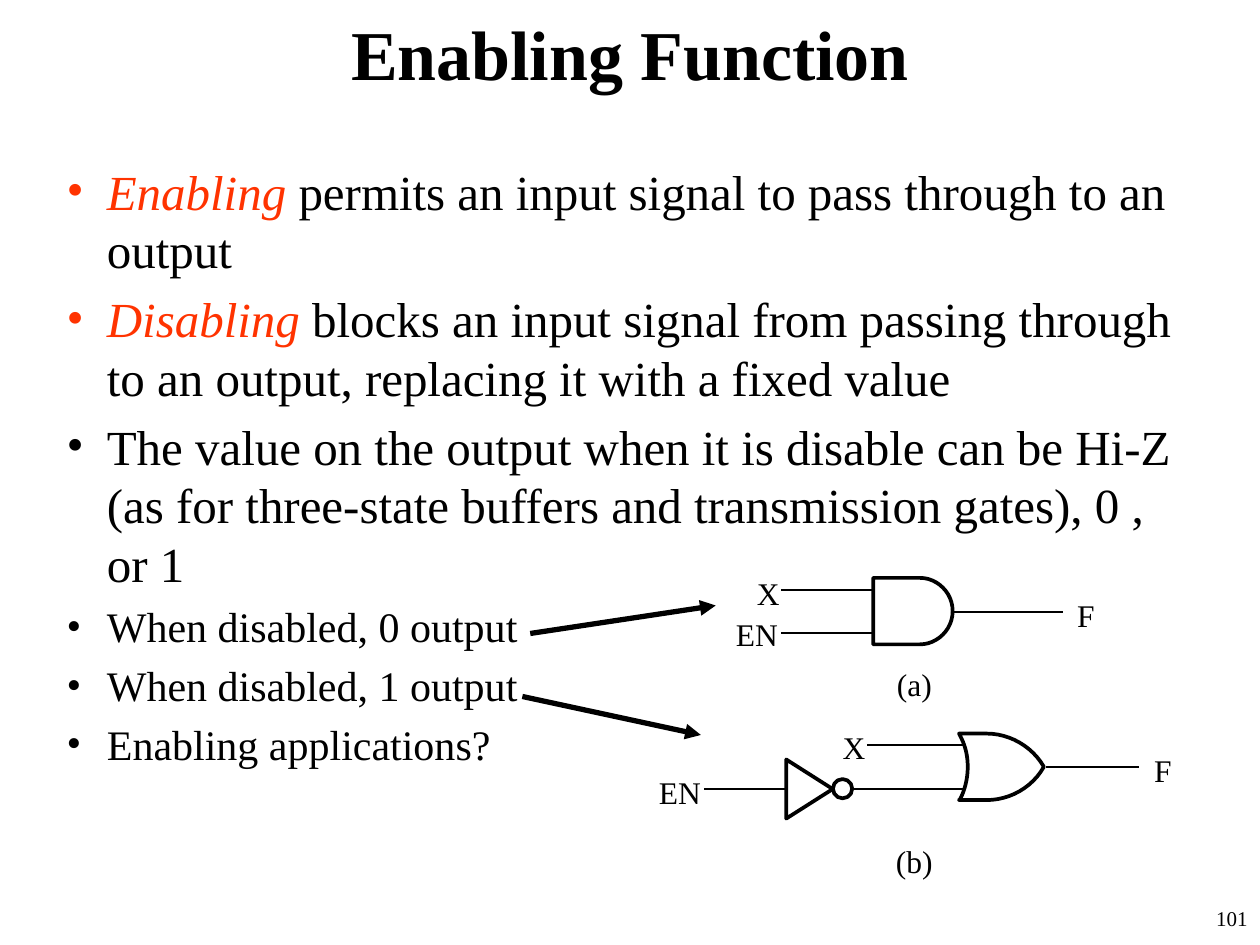
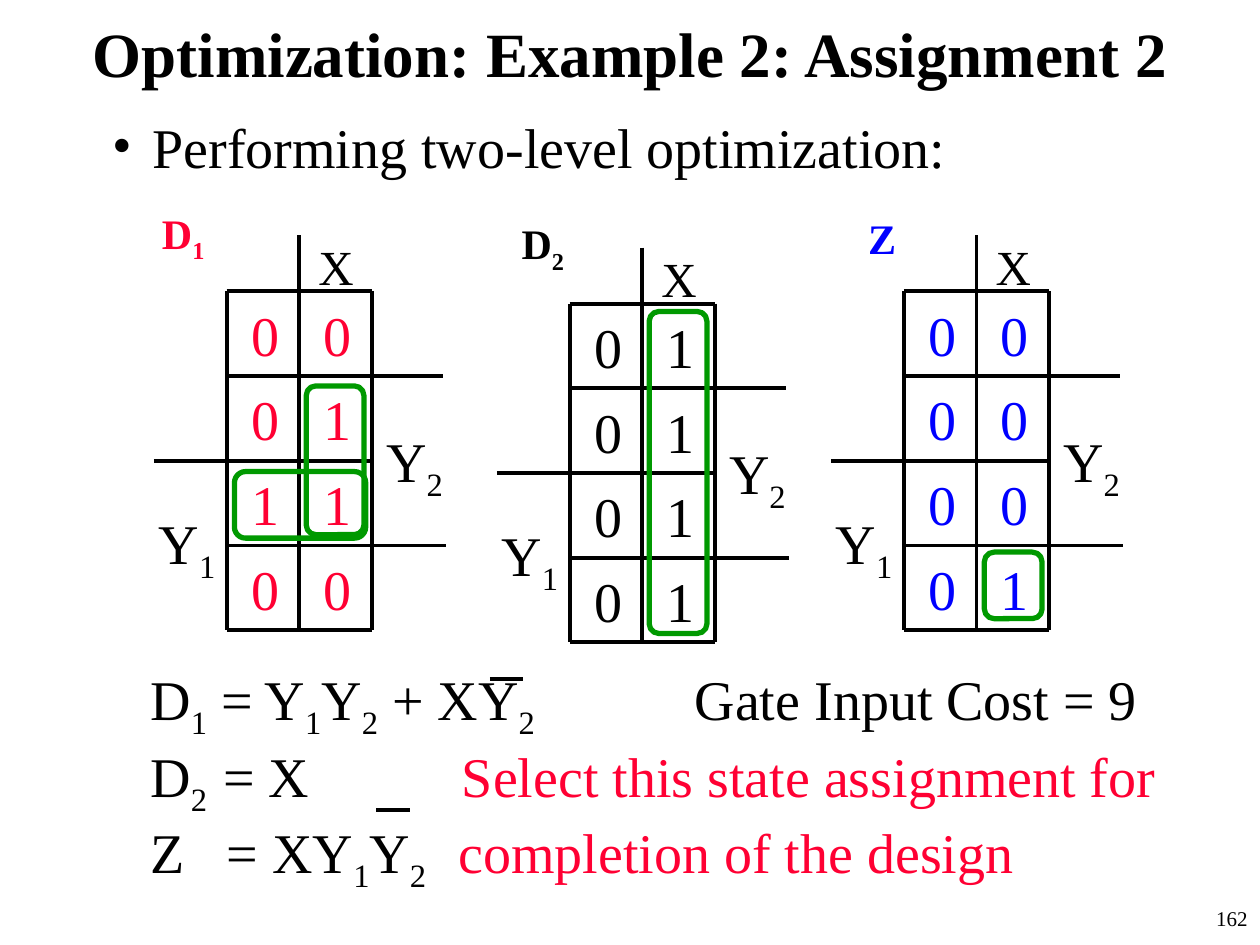
from pptx import Presentation
from pptx.dml.color import RGBColor
from pptx.enum.shapes import MSO_CONNECTOR, MSO_SHAPE
from pptx.enum.text import MSO_ANCHOR, PP_ALIGN
from pptx.oxml.ns import qn
from pptx.util import Pt
from lxml import etree

STRAIGHT = MSO_CONNECTOR.STRAIGHT
OVAL, ROUNDED = MSO_SHAPE.OVAL, MSO_SHAPE.ROUNDED_RECTANGLE
MIDDLE, TOP = MSO_ANCHOR.MIDDLE, MSO_ANCHOR.TOP
LEFT, CENTER, RIGHT = PP_ALIGN.LEFT, PP_ALIGN.CENTER, PP_ALIGN.RIGHT

COLORS = {"ink": "000000", "paper": "FFFFFF", "orange": "FF3300",
          "red": "FF0033", "blue": "0000FF", "green": "009900"}
FONT = "Times New Roman"
PAGE_WIDTH, PAGE_HEIGHT = 720, 540
INSET = (7.2, 3.6)
BULLET_INDENT = 23

ROW, COLUMN = 48.4, 41.5
SUBSCRIPT = {"sub": True}
RED = {"color": "red"}


def color(name):
    return RGBColor.from_string(COLORS[name])


def add_spans(para, spans, size, bold=False, ink="ink"):
    """Add spans to a paragraph: plain strings or (string, format) pairs."""
    for item in [spans] if isinstance(spans, str) else spans:
        words, look = (item, {}) if isinstance(item, str) else item
        span = para.add_run()
        span.text = words
        font = {"name": FONT, "size": Pt(size), "bold": bold, "italic": look.get("italic", False)}
        for key, value in font.items():
            setattr(span.font, key, value)
        span.font.color.rgb = color(look.get("color", ink))
        if look.get("sub"):
            span.font._element.set("baseline", "-25000")


def add_frame(page, box, inset=(0, 0), anchor=TOP):
    frame = page.shapes.add_textbox(*map(Pt, box)).text_frame
    across, down = map(Pt, inset)
    layout = {"word_wrap": True, "vertical_anchor": anchor,
              "margin_left": across, "margin_right": across,
              "margin_top": down, "margin_bottom": down}
    for key, value in layout.items():
        setattr(frame, key, value)
    return frame


def add_text(page, box, spans, size, align=LEFT, inset=(0, 0), anchor=TOP, **look):
    para = add_frame(page, box, inset, anchor).paragraphs[0]
    para.alignment = align
    add_spans(para, spans, size, **look)
    return para


def add_bullets(page, box, items):
    frame = add_frame(page, box, INSET)
    for index, (size, spans) in enumerate(items):
        para = frame.add_paragraph() if index else frame.paragraphs[0]
        para.space_before = Pt(size * 0.2)
        properties = para._p.get_or_add_pPr()
        properties.set("marL", str(Pt(BULLET_INDENT)))
        properties.set("indent", str(-Pt(BULLET_INDENT)))
        etree.SubElement(properties, qn("a:buFont"), typeface=FONT)
        etree.SubElement(properties, qn("a:buChar"), char="•")
        add_spans(para, spans, size)


def add_line(page, start, end, width, arrow=False):
    line = page.shapes.add_connector(STRAIGHT, *map(Pt, (*start, *end)))
    line.line.width = Pt(width)
    line.line.color.rgb = color("ink")
    if arrow:
        etree.SubElement(line.line._get_or_add_ln(), qn("a:tailEnd"), type="triangle")
    etree.SubElement(line._element.spPr, qn("a:effectLst"))


def style_shape(shape, width, ink="ink", fill="paper"):
    shape.shadow.inherit = False
    if fill:
        shape.fill.solid()
        shape.fill.fore_color.rgb = color(fill)
    else:
        shape.fill.background()
    shape.line.width = Pt(width)
    shape.line.color.rgb = color(ink)


def curve_points(start, curve, steps=12):
    """Sample a cubic curve given as two control points and an end point."""
    points = [start, curve[:2], curve[2:4], curve[4:]]
    for step in range(1, steps + 1):
        t = step / steps
        weights = ((1 - t) ** 3, 3 * t * (1 - t) ** 2, 3 * t * t * (1 - t), t ** 3)
        yield tuple(sum(w * p[axis] for w, p in zip(weights, points)) for axis in (0, 1))


def add_gate(page, left, top, outline):
    """Draw a closed outline whose entries are points or cubic curves."""
    points = [outline[0]]
    for entry in outline[1:]:
        points += [entry] if len(entry) == 2 else curve_points(points[-1], entry)
    placed = [(Pt(left + x), Pt(top + y)) for x, y in points]
    builder = page.shapes.build_freeform(*placed[0], scale=1.0)
    builder.add_line_segments(placed[1:], close=True)
    style_shape(builder.convert_to_shape(), 2.13)


AND_GATE = [(0, 0), (0, 38), (26.6, 38), (36.7, 38, 45.4, 29.5, 45.4, 19),
            (45.4, 8.5, 36.7, 0, 26.6, 0)]
OR_GATE = [(0, 38), (0.7, 37.4), (3.6, 31.7, 5, 25.2, 5, 19), (5, 12.2, 3.6, 6.5, 0, 0),
           (15.8, 0), (28.8, 0, 41.8, 7.2, 48.5, 19), (41.8, 31, 28.8, 38, 15.8, 38)]
INVERTER = [(0, 0), (0, 33.8), (26.6, 16.9)]


def add_wiring(page, left, top, wires, labels):
    for x1, x2, y in wires:
        add_line(page, (left + x1, top + y), (left + x2, top + y), 1.13)
    for words, x, y in labels:
        add_text(page, (left + x, top + y, 34, 21.6), words, 18)


def add_and_circuit(page, left, top):
    add_wiring(page, left, top,
               [(26.5, 92.5, 9), (26.5, 92.5, 33.7), (97, 187.5, 21.7)],
               [("X", 12.5, 0), ("EN", 0.5, 23.5), ("F", 195.5, 12.5), ("(a)", 92.5, 52)])
    add_gate(page, left + 79, top + 2.2, AND_GATE)


def add_or_circuit(page, left, top):
    add_wiring(page, left, top,
               [(26.5, 198.5, 34.7), (119.5, 190.5, 10), (221.5, 275, 22.5)],
               [("X", 105.5, 0), ("EN", 0.5, 25.5), ("F", 283.5, 13), ("(b)", 136, 65)])
    add_gate(page, left + 172, top + 3.2, OR_GATE)
    add_gate(page, left + 73.3, top + 18, INVERTER)
    bubble = page.shapes.add_shape(OVAL, *map(Pt, (left + 100, top + 29.2, 11, 11)))
    style_shape(bubble, 2.13)


def add_karnaugh_map(page, left, top, name, name_at, ink, rows, loops):
    """Draw a four-row map with its grid corner at left, top."""
    right, bottom = 2 * COLUMN, 4 * ROW
    grid = [((0, 0), (right, 0)), ((0, ROW), (123.5, ROW)),
            ((-COLUMN, 2 * ROW), (right, 2 * ROW)), ((0, 3 * ROW), (125.5, 3 * ROW)),
            ((0, bottom), (right, bottom)), ((0, 0), (0, bottom)),
            ((COLUMN, -32), (COLUMN, bottom)), ((right, 0), (right, bottom))]
    for (x1, y1), (x2, y2) in grid:
        add_line(page, (left + x1, top + y1), (left + x2, top + y2), 2.25)
    variables = [(["Y", ("2", SUBSCRIPT)], 84, 73.5, 32),
                 (["Y", ("1", SUBSCRIPT)], -46, 120.5, 32), ("X", 45.3, -35, 28)]
    for spans, x, y, size in variables:
        add_text(page, (left + x, top + y, 60, 45), spans, size, inset=INSET)
    for row, digits in enumerate(rows):
        for x, digit in zip((7.2, 48.2), digits):
            add_text(page, (left + x, top + 1.5 + row * ROW, 29, 45), digit, 32,
                     inset=INSET, ink=ink)
    x, y = name_at
    add_text(page, (left + x, top + y, 44, 36), name, 24, inset=INSET, bold=True, ink=ink)
    for x, y, width, height in loops:
        loop = page.shapes.add_shape(ROUNDED, *map(Pt, (left + x, top + y, width, height)))
        loop.adjustments[0] = 0.167
        style_shape(loop, 3, "green", None)


def add_equations(page, left):
    """Each row has a top, its tab stops and its spans."""
    rows = [
        (379.5, [311], ["D", ("1", SUBSCRIPT), " = Y", ("1", SUBSCRIPT), "Y", ("2", SUBSCRIPT),
                        " + XY", ("2", SUBSCRIPT), "\tGate Input Cost = 9"]),
        (423.5, [41.5, 178], ["D", ("2", SUBSCRIPT), "\t= X\t",
                              ("Select this state assignment for", RED)]),
        (467, [43.5, 176], ["Z\t= XY", ("1", SUBSCRIPT), "Y", ("2", SUBSCRIPT), "\t",
                            ("completion of the design", RED)]),
    ]
    for top, stops, spans in rows:
        para = add_text(page, (left, top, 610, 44), spans, 32)
        tabs = etree.SubElement(para._p.get_or_add_pPr(), qn("a:tabLst"))
        for stop in stops:
            etree.SubElement(tabs, qn("a:tab"), pos=str(Pt(stop)), algn="l")
    for x, y in [(280, 388), (215, 463)]:
        add_line(page, (x, y), (x + 19, y), 2.25)


def add_page(deck, title, title_size, number):
    page = deck.slides.add_slide(deck.slide_layouts[6])
    page.background.fill.solid()
    page.background.fill.fore_color.rgb = color("paper")
    add_text(page, (0, 0, PAGE_WIDTH, 60), title, title_size, CENTER, INSET, MIDDLE, bold=True)
    add_text(page, (570, 514, 150, 26), number, 12, RIGHT, INSET)
    return page


def build_enabling_page(deck):
    page = add_page(deck, "Enabling Function", 40, "101")
    keyword = {"color": "orange", "italic": True}
    add_bullets(page, (31, 88.5, 652, 392), [
        (28, [("Enabling", keyword), " permits an input signal to pass through to an output"]),
        (28, [("Disabling", keyword), " blocks an input signal from passing through to an "
              "output, replacing it with a fixed value"]),
        (28, "The value on the output when it is disable can be Hi-Z (as for three-state "
             "buffers and transmission gates), 0 , or 1"),
        (24, "When disabled, 0 output"),
        (24, "When disabled, 1 output"),
        (24, "Enabling applications?")])
    add_line(page, (303, 362), (409, 346), 3, arrow=True)
    add_line(page, (298.5, 398), (400.5, 420), 3, arrow=True)
    add_and_circuit(page, 420, 328)
    add_or_circuit(page, 376, 416)


def build_optimization_page(deck):
    page = add_page(deck, "Optimization: Example 2: Assignment 2", 36, "162")
    add_bullets(page, (57, 60.5, 644, 50), [(32, "Performing two-level optimization:")])
    add_karnaugh_map(page, 129.5, 166.5, ["D", ("1", SUBSCRIPT)], (-44, -51.5), "red",
                     ["00", "01", "11", "00"], [(4.5, 103, 75, 38), (45.5, 54, 33, 85)])
    add_karnaugh_map(page, 325.5, 173.5, ["D", ("2", SUBSCRIPT)], (-34.5, -52.5), "ink",
                     ["01"] * 4, [(45.5, 4.5, 33, 184)])
    add_karnaugh_map(page, 516.5, 166.5, "Z", (-27.5, -48.5), "blue",
                     ["00", "00", "00", "01"], [(46, 149, 33, 38)])
    add_equations(page, 86)


def main():
    deck = Presentation()
    deck.slide_width, deck.slide_height = Pt(PAGE_WIDTH), Pt(PAGE_HEIGHT)
    build_enabling_page(deck)
    build_optimization_page(deck)
    deck.save("out.pptx")


if __name__ == "__main__":
    main()
